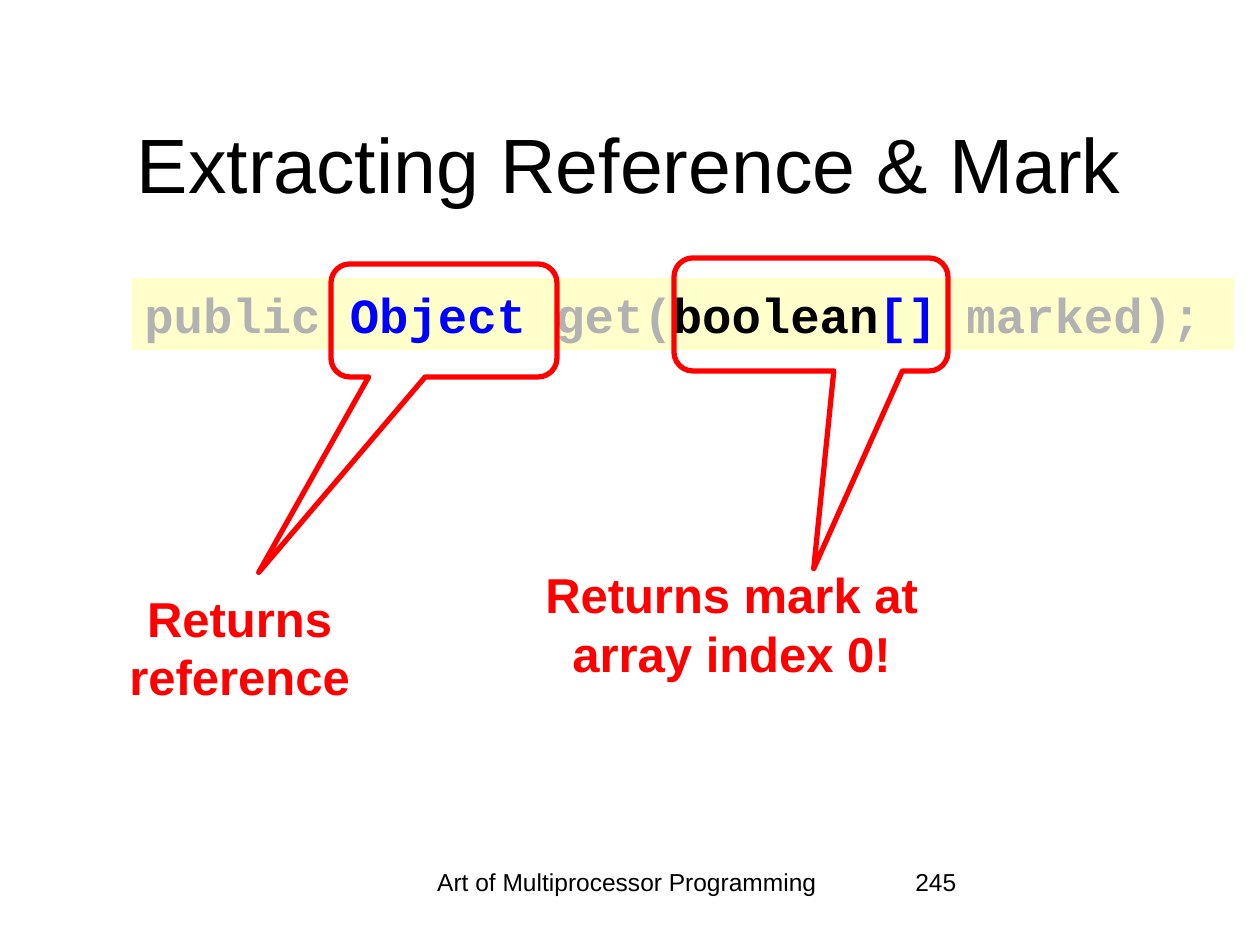
from pptx import Presentation
from pptx.dml.color import RGBColor
from pptx.enum.shapes import MSO_SHAPE as Shape
from pptx.enum.text import MSO_ANCHOR as Anchor, PP_ALIGN as Align
from pptx.util import Emu, Pt

EMU_PER_PX = 914400 / 126
COLORS = {
    "black": "000000",
    "gray": "B2B2B2",
    "blue": "0000FF",
    "red": "FF0000",
    "cream": "FFFFCC",
}
CODE = [
    ("public ", "gray"),
    ("Object ", "blue"),
    ("get(", "gray"),
    ("boolean", "black"),
    ("[]", "blue"),
    (" marked);", "gray"),
]


def px(value):
    return Emu(round(value * EMU_PER_PX))


def area(*lengths):
    return [px(length) for length in lengths]


def color(name):
    return RGBColor.from_string(COLORS[name])


def write(frame, spans, size=28, font="Arial", bold=False, align=Align.LEFT, anchor=Anchor.TOP):
    frame.word_wrap = True
    frame.vertical_anchor = anchor
    para = frame.paragraphs[0]
    para.alignment = align
    for text, name in spans:
        span = para.add_run()
        span.text = text
        span.font.name = font
        span.font.size = Pt(size)
        span.font.bold = bold
        span.font.color.rgb = color(name)


def add_title(page, text, place):
    title = page.shapes.title
    title.left, title.top, title.width, title.height = area(*place)
    write(title.text_frame, [(text, "black")], size=44, align=Align.CENTER, anchor=Anchor.MIDDLE)


def add_text(page, text, place, name="black", **style):
    box = page.shapes.add_textbox(*area(*place))
    write(box.text_frame, [(text, name)], **style)


def add_code(page, spans, place):
    box = page.shapes.add_shape(Shape.RECTANGLE, *area(*place))
    box.shadow.inherit = False
    box.fill.solid()
    box.fill.fore_color.rgb = color("cream")
    box.line.fill.background()
    write(box.text_frame, spans, font="Courier New", bold=True)


def add_callout(page, place, tip):
    callout = page.shapes.add_shape(Shape.ROUNDED_RECTANGULAR_CALLOUT, *area(*place))
    callout.shadow.inherit = False
    callout.fill.background()
    callout.line.color.rgb = color("red")
    callout.line.width = Pt(3)
    callout.adjustments[0], callout.adjustments[1] = tip


def main():
    deck = Presentation()
    deck.slide_width, deck.slide_height = area(1260, 945)
    page = deck.slides.add_slide(deck.slide_layouts[5])

    add_text(page, "Art of Multiprocessor Programming", (391, 861, 472, 63), size=14, align=Align.CENTER)
    add_text(page, "245", (903, 861, 262, 63), size=14)
    add_title(page, "Extracting Reference & Mark", (94, 84, 1071, 158))
    add_code(page, CODE, (132, 278, 1102, 72))

    notes = [
        ("Returns reference", (79, 582, 321, 130), (331, 264, 226, 113), (-0.82, 2.23)),
        ("Returns mark at array index 0!", (503, 558, 457, 130), (674, 258, 274, 113), (0.01, 2.25)),
    ]
    for text, place, callout, tip in notes:
        add_callout(page, callout, tip)
        add_text(page, text, place, "red", bold=True, align=Align.CENTER)

    deck.save("out.pptx")


if __name__ == "__main__":
    main()
